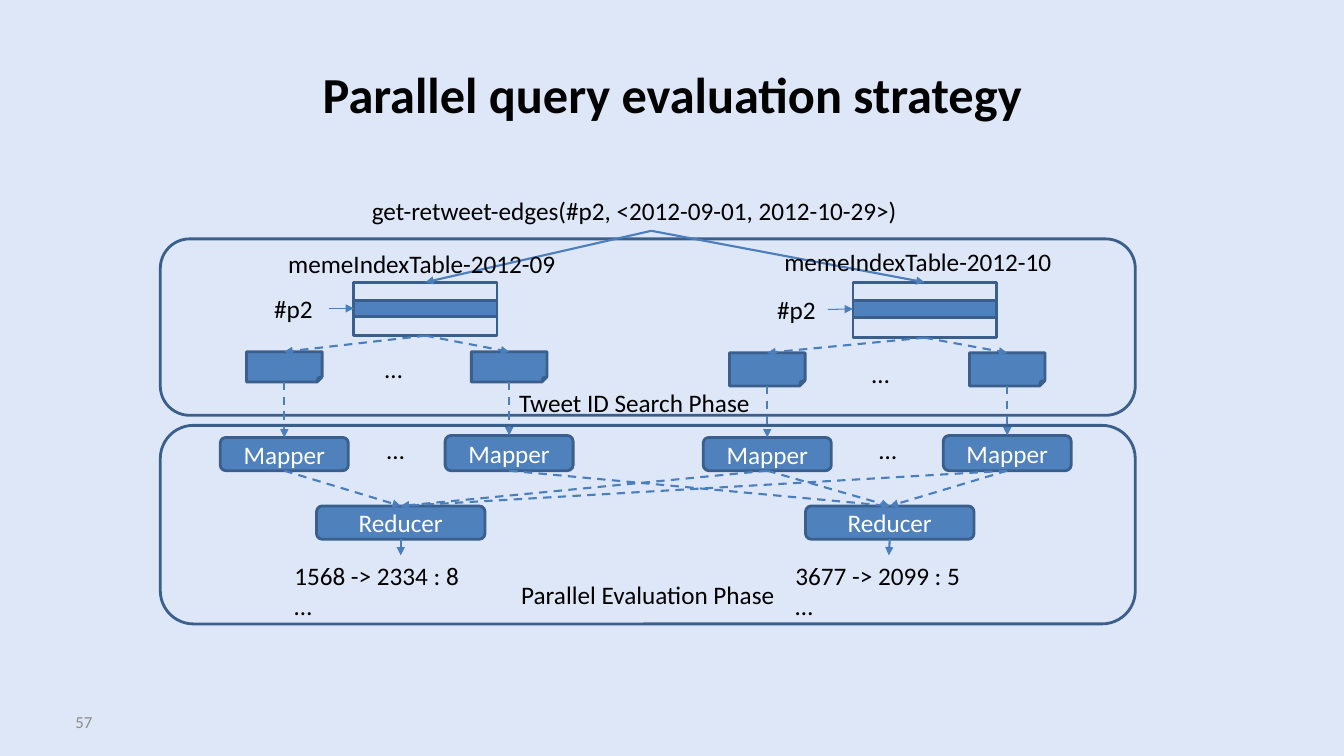
from lxml import etree
from pptx import Presentation
from pptx.dml.color import RGBColor
from pptx.enum.dml import MSO_LINE
from pptx.enum.shapes import MSO_CONNECTOR, MSO_SHAPE
from pptx.enum.text import MSO_ANCHOR, PP_ALIGN
from pptx.oxml.ns import qn
from pptx.util import Inches, Pt

BACKGROUND = RGBColor(0xDE, 0xE7, 0xF8)
BLUE = RGBColor(0x4F, 0x81, 0xBD)
OUTLINE = RGBColor(0x3A, 0x5F, 0x8C)
ARROW = RGBColor(0x4B, 0x7E, 0xBC)
BLACK = RGBColor(0, 0, 0)
WHITE = RGBColor(0xFF, 0xFF, 0xFF)
GRAY = RGBColor(0x8C, 0x8C, 0x8C)
FONT = "Calibri"
TOP, LEFT, BOTTOM, RIGHT = range(4)

presentation = Presentation()
presentation.slide_width = Inches(13.33)
presentation.slide_height = Inches(7.5)
slide = presentation.slides.add_slide(presentation.slide_layouts[5])
slide.background.fill.solid()
slide.background.fill.fore_color.rgb = BACKGROUND


def add_item(area, text="", kind=None, fill=None, size=18, color=BLACK):
    """Add a text box, or an outlined shape when a kind is given."""
    area = [Inches(value) for value in area]
    if kind is None:
        shape = slide.shapes.add_textbox(*area)
    else:
        shape = slide.shapes.add_shape(kind, *area)
        shape.shadow.inherit = False
        shape.line.color.rgb = OUTLINE
        shape.line.width = Pt(2)
        if fill is None:
            shape.fill.background()
        else:
            shape.fill.solid()
            shape.fill.fore_color.rgb = fill
    if text:
        frame = shape.text_frame
        frame.word_wrap = True
        frame.text = text
        for paragraph in frame.paragraphs:
            paragraph.font.name = FONT
            paragraph.font.size = Pt(size)
            paragraph.font.color.rgb = color
            paragraph.alignment = PP_ALIGN.LEFT if kind is None else PP_ALIGN.CENTER
    return shape


def add_arrow(start, end, start_site=BOTTOM, end_site=TOP, width=1.5, dashed=True):
    """Join two shapes with an arrow."""
    connector = slide.shapes.add_connector(MSO_CONNECTOR.STRAIGHT, 0, 0, 0, 0)
    connector.begin_connect(start, start_site)
    connector.end_connect(end, end_site)
    connector.line.color.rgb = ARROW
    connector.line.width = Pt(width)
    if dashed:
        connector.line.dash_style = MSO_LINE.DASH
    etree.SubElement(connector.line._get_or_add_ln(), qn("a:tailEnd"), type="triangle")
    etree.SubElement(connector._element.spPr, qn("a:effectLst"))


# Title and slide number
title = slide.shapes.title
title.left, title.top, title.width, title.height = map(Inches, (0.67, 0.3, 12, 1.25))
title.text_frame.text = "Parallel query evaluation strategy"
title.text_frame.vertical_anchor = MSO_ANCHOR.MIDDLE
heading = title.text_frame.paragraphs[0]
heading.alignment = PP_ALIGN.CENTER
heading.font.name = FONT
heading.font.size = Pt(36)
heading.font.bold = True
heading.font.color.rgb = BLACK
number = add_item((0.65, 6.96, 3.11, 0.4), "57", size=12, color=GRAY)
number.text_frame.vertical_anchor = MSO_ANCHOR.MIDDLE

# Phase panels and query
add_item((1.59, 2.37, 9.67, 1.75), kind=MSO_SHAPE.ROUNDED_RECTANGLE)
evaluation = add_item((1.59, 4.22, 9.67, 1.97), "Parallel Evaluation Phase",
                      MSO_SHAPE.ROUNDED_RECTANGLE)
evaluation.text_frame.vertical_anchor = MSO_ANCHOR.BOTTOM
query = add_item((3.59, 1.89, 5.74, 0.4),
                 "get-retweet-edges(#p2, <2012-09-01, 2012-10-29>)")
add_item((5.05, 3.79, 2.87, 0.4), "Tweet ID Search Phase")

# Index tables, each with the row matched by #p2
tables = []
for left, height, row_height, name, name_area, key_area in (
    (3.51, 0.53, 0.16, "memeIndexTable-2012-09", (2.76, 2.41, 3.08, 0.4), (2.62, 2.86, 0.64, 0.4)),
    (8.46, 0.55, 0.17, "memeIndexTable-2012-10", (7.68, 2.39, 3.08, 0.4), (7.61, 2.87, 0.6, 0.4)),
):
    table = add_item((left, 2.8, 1.42, height), kind=MSO_SHAPE.RECTANGLE)
    row = add_item((left, 2.98, 1.42, row_height), kind=MSO_SHAPE.RECTANGLE, fill=BLUE)
    add_arrow(query, table, dashed=False)
    add_item(name_area, name)
    key = add_item(key_area, "#p2")
    add_arrow(key, row, RIGHT, LEFT, width=0.75, dashed=False)
    tables.append(table)

# Tweet ID files, each feeding a mapper
mappers = []
for table, center, file_top, file_height, mapper_top in (
    (tables[0], 2.82, 3.49, 0.3, 4.34),
    (tables[0], 5.05, 3.49, 0.3, 4.32),
    (tables[1], 7.61, 3.5, 0.33, 4.34),
    (tables[1], 9.99, 3.5, 0.33, 4.32),
):
    id_file = add_item((center - 0.375, file_top, 0.75, file_height),
                       kind=MSO_SHAPE.FOLDED_CORNER, fill=BLUE)
    mapper = add_item((center - 0.635, mapper_top, 1.27, 4.67 - mapper_top), "Mapper",
                      MSO_SHAPE.ROUNDED_RECTANGLE, BLUE, color=WHITE)
    add_arrow(table, id_file)
    add_arrow(id_file, mapper)
    mappers.append(mapper)

# Ellipses between files and between mappers
for left, top in ((3.72, 3.46), (8.55, 3.51), (3.74, 4.26), (8.62, 4.26)):
    add_item((left, top, 0.54, 0.4), "…")

# Reducers with their inputs and results
for left, sources, result, result_left, result_width in (
    (3.14, (0, 2, 3), "1568 -> 2334 : 8\n…", 2.82, 2.31),
    (7.99, (1, 2, 3), "3677 -> 2099 : 5\n…", 7.79, 2.05),
):
    reducer = add_item((left, 5.02, 1.67, 0.33), "Reducer",
                       MSO_SHAPE.ROUNDED_RECTANGLE, BLUE, color=WHITE)
    for source in sources:
        add_arrow(mappers[source], reducer)
    output = add_item((result_left, 5.51, result_width, 0.71), result)
    add_arrow(reducer, output)

presentation.save("out.pptx")
